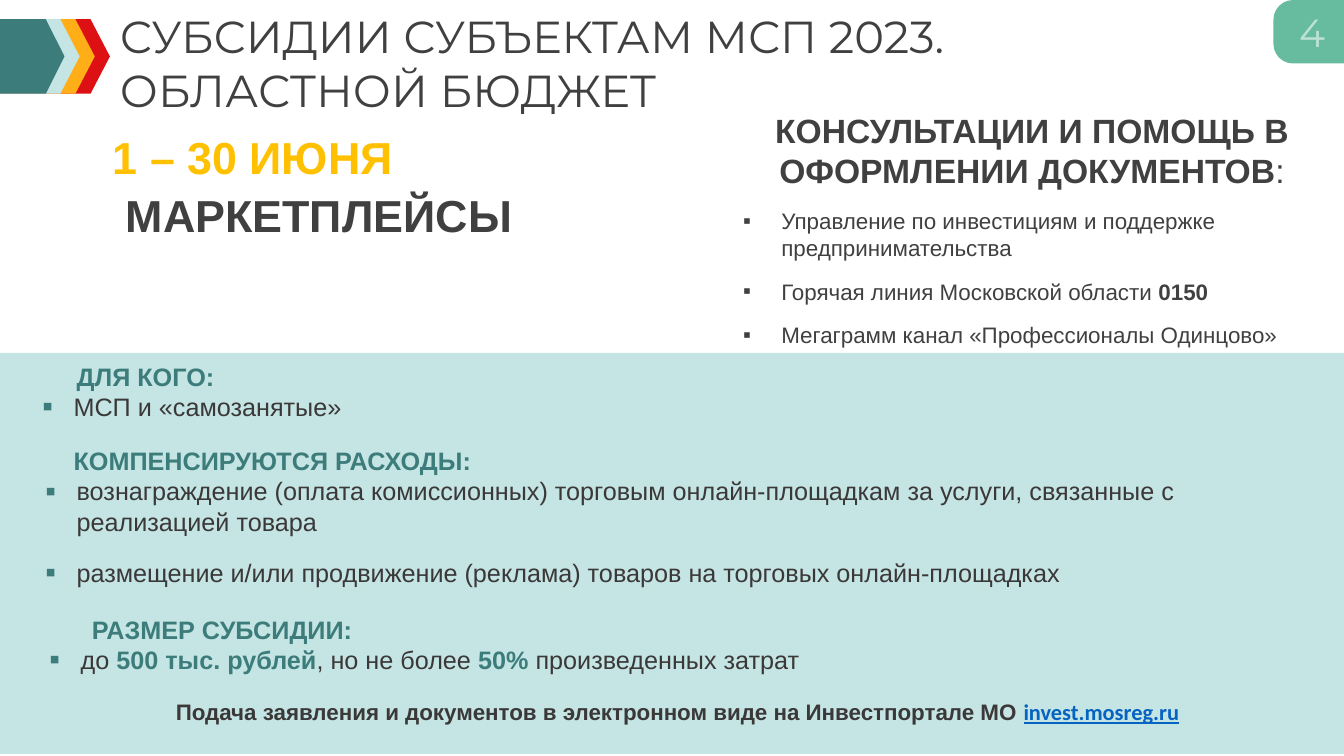
from dataclasses import dataclass, field

from lxml import etree
from pptx import Presentation, util as u
from pptx.dml.color import RGBColor
from pptx.enum import shapes, text
from pptx.oxml.ns import qn

PX = 9144  # 100 px to the inch
ALIGN = text.PP_ALIGN


@dataclass(frozen=True)
class Theme:
    ink: str = "404040"
    body: str = "3B3838"
    teal: str = "3C7C7B"
    mint: str = "C5E4E4"
    red: str = "DD1013"
    orange: str = "FFAE17"
    amber: str = "FFC000"
    green: str = "67BC9F"
    pale: str = "BCE2D5"
    link: str = "0563C1"
    sans: str = "Arial"
    display: str = "Montserrat"
    address: str = "Calibri"
    headline: int = 32
    badge: int = 28
    subhead: int = 24
    text: int = 18
    small: int = 16


T = Theme()


@dataclass
class Para:
    """One paragraph; each run is (text, font changes)."""
    runs: list
    size: int = T.text
    color: str = T.body
    bold: bool = False
    font: str = T.sans
    align: ALIGN = ALIGN.LEFT
    margin: int = 0
    bullet: dict = field(default_factory=dict)
    before: int = 0
    after: int = 0


def place(shape, left, top, width, height):
    shape.left, shape.top = left * PX, top * PX
    shape.width, shape.height = width * PX, height * PX


def style(font, size=None, color=None, bold=None, name=None, underline=None):
    if size:
        font.size = u.Pt(size)
    if color:
        font.color.rgb = RGBColor.from_string(color)
    if bold is not None:
        font.bold = bold
    if name:
        font.name = name
    if underline:
        font.underline = True


def set_bullet(paragraph, margin, bullet):
    """Set the indent and either a square bullet or none."""
    props = paragraph._p.get_or_add_pPr()
    props.set("marL", str(margin * PX))
    props.set("indent", str(-margin * PX if bullet else 0))
    if not bullet:
        etree.SubElement(props, qn("a:buNone"))
        return
    color = etree.SubElement(props, qn("a:buClr"))
    etree.SubElement(color, qn("a:srgbClr"), val=bullet["color"])
    etree.SubElement(props, qn("a:buSzPct"), val=str(bullet["percent"] * 1000))
    etree.SubElement(props, qn("a:buFont"), typeface=T.sans)
    etree.SubElement(props, qn("a:buChar"), char="▪")


def write(shape, paras, wrap=True):
    frame = shape.text_frame
    frame.word_wrap = wrap
    frame.auto_size = (text.MSO_AUTO_SIZE.NONE if wrap
                       else text.MSO_AUTO_SIZE.SHAPE_TO_FIT_TEXT)
    frame.vertical_anchor = text.MSO_ANCHOR.TOP
    for number, para in enumerate(paras):
        paragraph = frame.add_paragraph() if number else frame.paragraphs[0]
        set_bullet(paragraph, para.margin, para.bullet)
        paragraph.alignment = para.align
        paragraph.space_before = u.Pt(para.before)
        paragraph.space_after = u.Pt(para.after)
        style(paragraph.font, para.size, para.color, para.bold, para.font)
        for words, changes in para.runs:
            run = paragraph.add_run()
            run.text = words
            style(run.font, **changes)


def add_label(slide, box, para, wrap=True):
    label = slide.shapes.add_textbox(*(n * PX for n in box))
    write(label, [para], wrap)


def add_block(parent, kind, box, fill, adjustments=()):
    block = parent.shapes.add_shape(kind, *(n * PX for n in box))
    block.shadow.inherit = False
    block.fill.solid()
    block.fill.fore_color.rgb = RGBColor.from_string(fill)
    block.line.fill.background()
    for number, value in enumerate(adjustments):
        block.adjustments[number] = value
    return block


def add_arrows(slide):
    arrows = slide.shapes.add_group_shape()
    for width, fill, point in ((109, T.red, 0.26), (94, T.orange, 0.26),
                               (79, T.mint, 0.26), (64, T.teal, 0.29)):
        add_block(arrows, shapes.MSO_SHAPE.PENTAGON, (0, 19, width, 74), fill, [point])


def add_page_badge(slide, number):
    badge = add_block(slide, shapes.MSO_SHAPE.ROUND_2_SAME_RECTANGLE,
                      (1267, -4, 63, 71), T.green, [0.31, 0])
    badge.rotation = 270
    write(badge, [Para([(number, {})], T.badge, T.pale, font=T.display,
                       align=ALIGN.CENTER)])
    frame = badge.text_frame
    frame.vertical_anchor = text.MSO_ANCHOR.MIDDLE
    frame.margin_left = frame.margin_right = 0
    frame._txBody.bodyPr.set("vert", "vert")


def heading(words, margin):
    return Para([(words, {})], color=T.teal, bold=True, margin=margin)


def item(*runs, after=0):
    return Para(list(runs), margin=31, after=after,
                bullet={"color": T.teal, "percent": 120})


def contact(*runs):
    return Para(list(runs), T.small, T.ink, margin=38, before=6, after=6,
                bullet={"color": T.ink, "percent": 100})


def main():
    deck = Presentation()
    deck.slide_width, deck.slide_height = u.Inches(13.33), u.Inches(7.5)
    slide = deck.slides.add_slide(deck.slide_layouts.get_by_name("Comparison"))
    title = slide.shapes.title
    band = add_block(slide, shapes.MSO_SHAPE.RECTANGLE, (0, 350, 1333, 398), T.mint)
    title.element.addprevious(band.element)

    place(title, 109, 4, 1218, 118)
    write(title, [Para([(line, {})], T.headline, T.ink, font=T.display)
                  for line in ("СУБСИДИИ СУБЪЕКТАМ МСП 2023.", "ОБЛАСТНОЙ БЮДЖЕТ")])
    add_arrows(slide)
    add_page_badge(slide, "4")

    add_label(slide, (102, 124, 300, 64),
              Para([("1 – 30 ИЮНЯ", {})], T.headline, T.amber, True), wrap=False)
    add_label(slide, (115, 181, 420, 64),
              Para([("МАРКЕТПЛЕЙСЫ", {})], T.headline, T.ink, True), wrap=False)

    strong = {"color": T.teal, "bold": True}
    lists = (
        ((727, 104, 593, 249), [
            Para([("КОНСУЛЬТАЦИИ И ПОМОЩЬ В ОФОРМЛЕНИИ ДОКУМЕНТОВ", {"bold": True}),
                  (":", {})], T.subhead, T.ink, align=ALIGN.CENTER, before=6, after=6),
            contact(("Управление по инвестициям и поддержке предпринимательства", {})),
            contact(("Горячая линия Московской области ", {}), ("0150", {"bold": True})),
            contact(("Мегаграмм канал «Профессионалы Одинцово»", {}))]),
        ((32, 353, 613, 71), [
            heading("ДЛЯ КОГО:", 34),
            item(("МСП и «самозанятые»", {}))]),
        ((35, 437, 1298, 151), [
            heading("КОМПЕНСИРУЮТСЯ РАСХОДЫ:", 28),
            item(("вознаграждение (оплата комиссионных) торговым онлайн-площадкам "
                  "за услуги, связанные с реализацией товара", {}), after=15),
            item(("размещение и/или продвижение (реклама) товаров "
                  "на торговых онлайн-площадках", {}))]),
        ((39, 604, 1282, 71), [
            heading("РАЗМЕР СУБСИДИИ:", 42),
            item(("до ", {}), ("500 тыс. рублей", strong), (", но не более ", {}),
                 ("50%", strong), (" произведенных затрат", {}))]),
    )
    bodies = [p for p in slide.placeholders if p.placeholder_format.idx > 0]
    for body, (box, paras) in zip(bodies, lists):
        place(body, *box)
        write(body, paras)

    add_label(slide, (17, 688, 1310, 64), Para(
        [("Подача заявления и документов в электронном виде на Инвестпортале МО ", {}),
         ("invest.mosreg.ru", {"name": T.address, "color": T.link, "underline": True})],
        T.small, bold=True, align=ALIGN.CENTER))
    deck.save("out.pptx")


if __name__ == "__main__":
    main()
